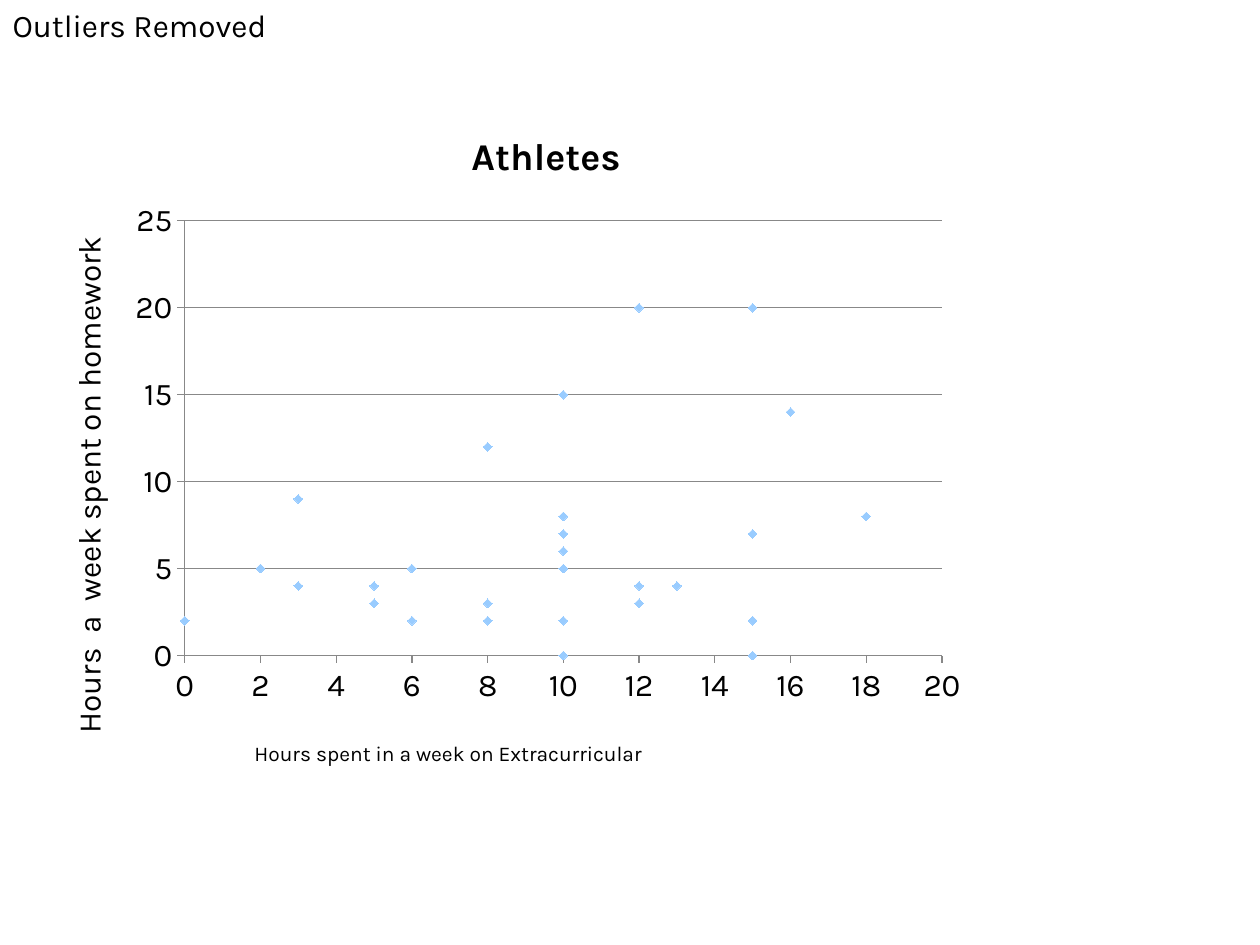
from lxml.etree import SubElement
from pptx import Presentation
from pptx.chart.data import XyChartData
from pptx.dml.color import RGBColor
from pptx.enum.chart import XL_CHART_TYPE as ChartType, XL_MARKER_STYLE as Marker, XL_TICK_MARK as Tick
from pptx.enum.text import MSO_ANCHOR as Anchor, MSO_AUTO_SIZE as AutoSize, PP_ALIGN as Align
from pptx.oxml.ns import qn
from pptx.util import Inches, Pt

WIDTH, HEIGHT = 10, 7.5
FONT = "Karla"
INK, GRID, POINT = "000000", "888888", "99CCFF"
EXTRACURRICULAR = [10, 0, 6, 8, 12, 10, 15, 15, 5, 8, 12, 10, 15, 16, 2,
                   8, 3, 10, 15, 10, 10, 6, 12, 13, 5, 3, 15, 18, 10]
HOMEWORK = [0, 2, 2, 2, 3, 2, 2, 2, 3, 12, 20, 15, 20, 14, 5,
            3, 9, 7, 7, 5, 6, 5, 4, 4, 4, 4, 0, 8, 8]


def color(hex_code):
    return RGBColor.from_string(hex_code)


def style_font(font, size, bold=False):
    font.name = FONT
    font.size = Pt(size)
    font.bold = bold
    font.color.rgb = color(INK)


def place(label, left, top, width, height):
    label.left, label.top = Inches(left), Inches(top)
    label.width, label.height = Inches(width), Inches(height)


def write(label, text, size):
    frame = label.text_frame
    frame.word_wrap = True
    frame.auto_size = AutoSize.NONE
    frame.vertical_anchor = Anchor.TOP
    paragraph = frame.paragraphs[0]
    paragraph.alignment = Align.LEFT
    run = paragraph.add_run()
    run.text = text
    style_font(run.font, size)


def add_label(slide, text, size, box, rotation=0):
    label = slide.shapes.add_textbox(*map(Inches, box))
    label.rotation = rotation
    write(label, text, size)


def style_axis(axis, maximum, step, gridlines):
    axis.minimum_scale, axis.maximum_scale, axis.major_unit = 0, maximum, step
    axis.major_tick_mark, axis.minor_tick_mark = Tick.OUTSIDE, Tick.NONE
    axis.has_major_gridlines = gridlines
    style_font(axis.tick_labels.font, 18)
    lines = [axis.format.line]
    if gridlines:
        lines.append(axis.major_gridlines.format.line)
    for line in lines:
        line.color.rgb = color(GRID)
        line.width = Pt(0.75)


def set_plot_area(chart, **shares):
    plot_area = chart.element.find(".//" + qn("c:plotArea"))
    for old in plot_area.findall(qn("c:layout")):
        plot_area.remove(old)
    layout = SubElement(plot_area, qn("c:layout"))
    plot_area.insert(0, layout)
    manual = SubElement(layout, qn("c:manualLayout"))
    SubElement(manual, qn("c:layoutTarget")).set("val", "inner")
    for mode in ("xMode", "yMode"):
        SubElement(manual, qn("c:" + mode)).set("val", "edge")
    for side, share in shares.items():
        SubElement(manual, qn("c:" + side)).set("val", str(share))


def add_scatter(slide, box):
    data = XyChartData()
    points = data.add_series("Series 1")
    for extracurricular, homework in zip(EXTRACURRICULAR, HOMEWORK):
        points.add_data_point(extracurricular, homework)
    chart = slide.shapes.add_chart(ChartType.XY_SCATTER, *map(Inches, box), data).chart
    style_font(chart.font, 18)
    chart.has_legend = False
    chart.has_title = True
    heading = chart.chart_title.text_frame.paragraphs[0].add_run()
    heading.text = "Athletes"
    style_font(heading.font, 21.6, bold=True)
    chart.chart_title.include_in_layout = False
    style_axis(chart.category_axis, 20, 2, False)
    style_axis(chart.value_axis, 25, 5, True)
    chart.plots[0].vary_by_categories = False
    series = chart.plots[0].series[0]
    series.smooth = False
    series.format.line.fill.background()
    series.marker.style, series.marker.size = Marker.DIAMOND, 5
    series.marker.format.fill.solid()
    series.marker.format.fill.fore_color.rgb = color(POINT)
    series.marker.format.line.color.rgb = color(POINT)
    set_plot_area(chart, x=0.08, y=0.19, w=0.88, h=0.71)


def main():
    deck = Presentation()
    deck.slide_width, deck.slide_height = Inches(WIDTH), Inches(HEIGHT)
    slide = deck.slides.add_slide(deck.slide_layouts[5])
    title = slide.shapes.title
    place(title, 0, 0, 2.33, 0.4)
    write(title, "Outliers Removed", 18)
    add_scatter(slide, (0.92, 0.83, 6.83, 4.86))
    add_label(slide, "Hours  a  week spent on homework", 18, (-1.76, 3.26, 4.92, 0.4), 270)
    add_label(slide, "Hours spent in a week on Extracurricular", 12, (1.92, 5.83, 5.42, 0.3))
    deck.save("out.pptx")


if __name__ == "__main__":
    main()
